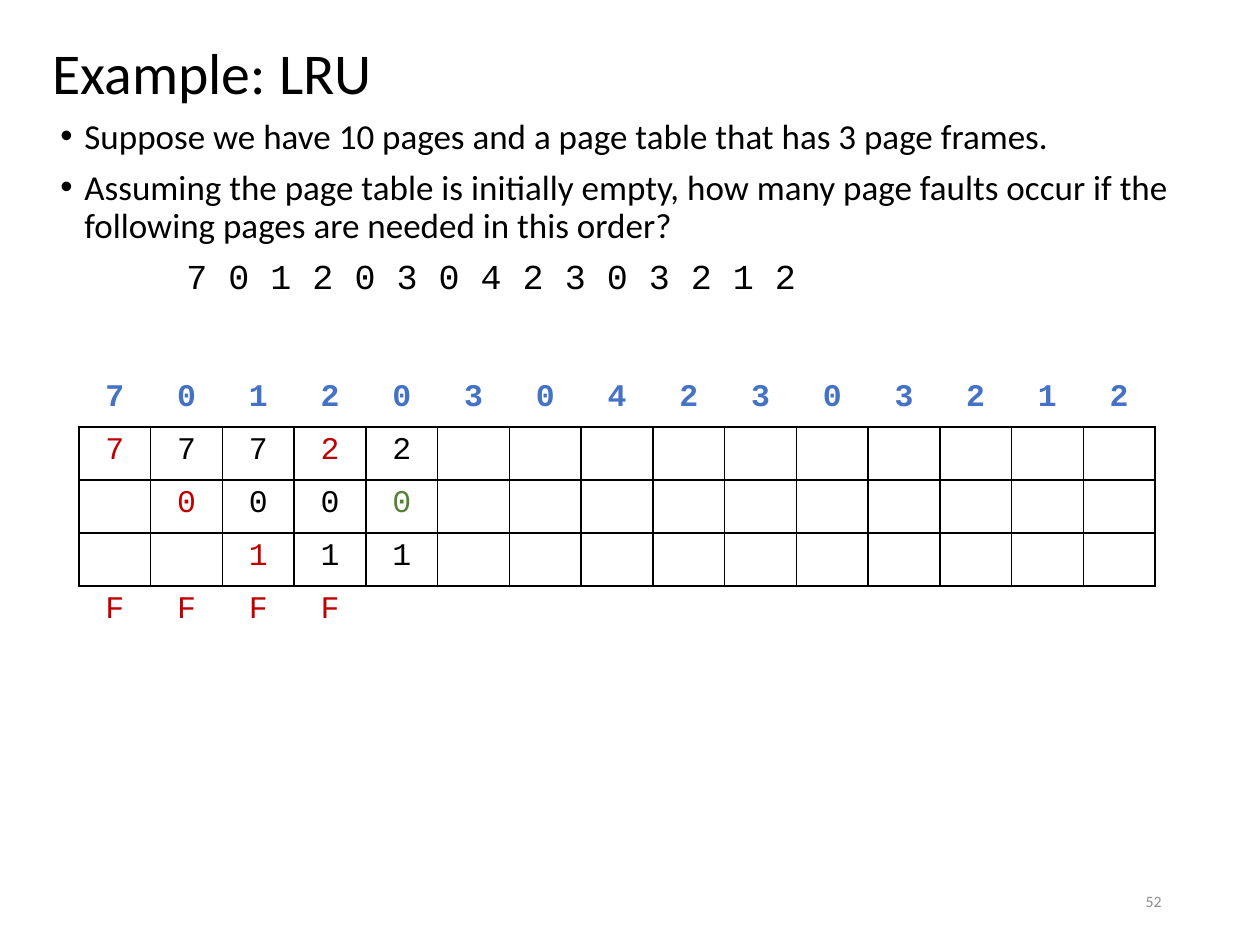
from lxml.etree import SubElement
from pptx import Presentation
from pptx.dml.color import RGBColor
from pptx.enum.text import MSO_ANCHOR as Anchor, MSO_AUTO_SIZE as Fit, PP_ALIGN as Align
from pptx.oxml.ns import qn
from pptx.util import Emu, Pt

BLACK = RGBColor(0x00, 0x00, 0x00)
GRAY = RGBColor(0x8C, 0x8C, 0x8C)
BLUE = RGBColor(0x44, 0x72, 0xC4)
RED = RGBColor(0xC0, 0x00, 0x00)
GREEN = RGBColor(0x54, 0x82, 0x35)

PAGES = "7 0 1 2 0 3 0 4 2 3 0 3 2 1 2".split()
FRAMES = ["77722", " 0000", "  111"]
FAULTS = "FFFF"
LOADS = {(1, 0), (2, 1), (3, 2), (1, 3)}
HITS = {(2, 4)}
POINTS = [
    "Suppose we have 10 pages and a page table that has 3 page frames.",
    "Assuming the page table is initially empty, how many page faults occur "
    "if the following pages are needed in this order?",
]


def px(num):
    return Emu(round(num * 914400 / 126))


class Deck:
    sans = "Calibri"
    mono = "Courier New"

    def __init__(self, wide, high):
        self.file = Presentation()
        self.file.slide_width = px(wide)
        self.file.slide_height = px(high)
        self.slide = self.file.slides.add_slide(self.file.slide_layouts[5])

    def run(self, para, text, size, color=BLACK, face=sans, bold=False):
        run = para.add_run()
        run.text = text
        font = run.font
        font.name, font.size, font.bold = face, Pt(size), bold
        font.color.rgb = color

    def title(self, box, text):
        shape = self.slide.shapes.title
        shape.left, shape.top, shape.width, shape.height = map(px, box)
        frame = shape.text_frame
        frame.auto_size = Fit.NONE
        frame.vertical_anchor = Anchor.MIDDLE
        para = frame.paragraphs[0]
        para.alignment = Align.LEFT
        para.line_spacing = 0.9
        self.run(para, text, 33)

    def frame(self, box):
        frame = self.slide.shapes.add_textbox(*map(px, box)).text_frame
        frame.word_wrap = True
        frame.auto_size = Fit.NONE
        return frame

    def indent(self, para, left, hang=0):
        props = para._p.get_or_add_pPr()
        props.set("marL", str(px(left)))
        props.set("indent", str(-px(hang)))
        if hang:
            SubElement(props, qn("a:buFont"), typeface="Arial")
            SubElement(props, qn("a:buChar"), char="•")

    def body(self, box, points, order):
        frame = self.frame(box)
        for at, text in enumerate(points + [order]):
            para = frame.add_paragraph() if at else frame.paragraphs[0]
            para.line_spacing = 0.9
            para.space_before = Pt(7.5)
            if at < len(points):
                self.indent(para, 24, 24)
                self.run(para, text, 20)
            else:
                self.indent(para, 126)
                self.run(para, text, 20, face=self.mono)

    def number(self, box, text):
        frame = self.frame(box)
        frame.vertical_anchor = Anchor.MIDDLE
        para = frame.paragraphs[0]
        para.alignment = Align.RIGHT
        self.run(para, text, 9, GRAY)

    def edges(self, cell, sides):
        props = cell._tc.get_or_add_tcPr()
        for side in "LRTB":
            line = SubElement(props, qn("a:ln" + side), w=str(Pt(1)))
            if side in sides:
                fill = SubElement(line, qn("a:solidFill"))
                SubElement(fill, qn("a:srgbClr"), val=str(BLACK))
            else:
                SubElement(line, qn("a:noFill"))

    def table(self, box, rows, tint):
        last = len(rows) - 1
        cols = len(rows[0])
        table = self.slide.shapes.add_table(len(rows), cols, *map(px, box)).table
        table.first_row = table.horz_banding = False
        for row, texts in enumerate(rows):
            for col in range(cols):
                cell = table.cell(row, col)
                self.edges(cell, {0: "B", last: "T"}.get(row, "LRTB"))
                cell.fill.background()
                text = texts[col].strip() if col < len(texts) else ""
                if text:
                    para = cell.text_frame.paragraphs[0]
                    para.alignment = Align.CENTER
                    self.run(para, text, 18, tint(row, col), self.mono, row == 0)


def tint(row, col):
    if row == 0:
        return BLUE
    if row > len(FRAMES) or (row, col) in LOADS:
        return RED
    return GREEN if (row, col) in HITS else BLACK


def main():
    deck = Deck(1260, 945)
    deck.body((48, 113, 1172, 819), POINTS, " ".join(PAGES))
    deck.title((40, 13, 1178, 125), "Example: LRU")
    deck.number((890, 876, 284, 50), "52")
    deck.table((79, 374, 1076, 265), [PAGES, *FRAMES, FAULTS], tint)
    deck.file.save("out.pptx")


if __name__ == "__main__":
    main()
